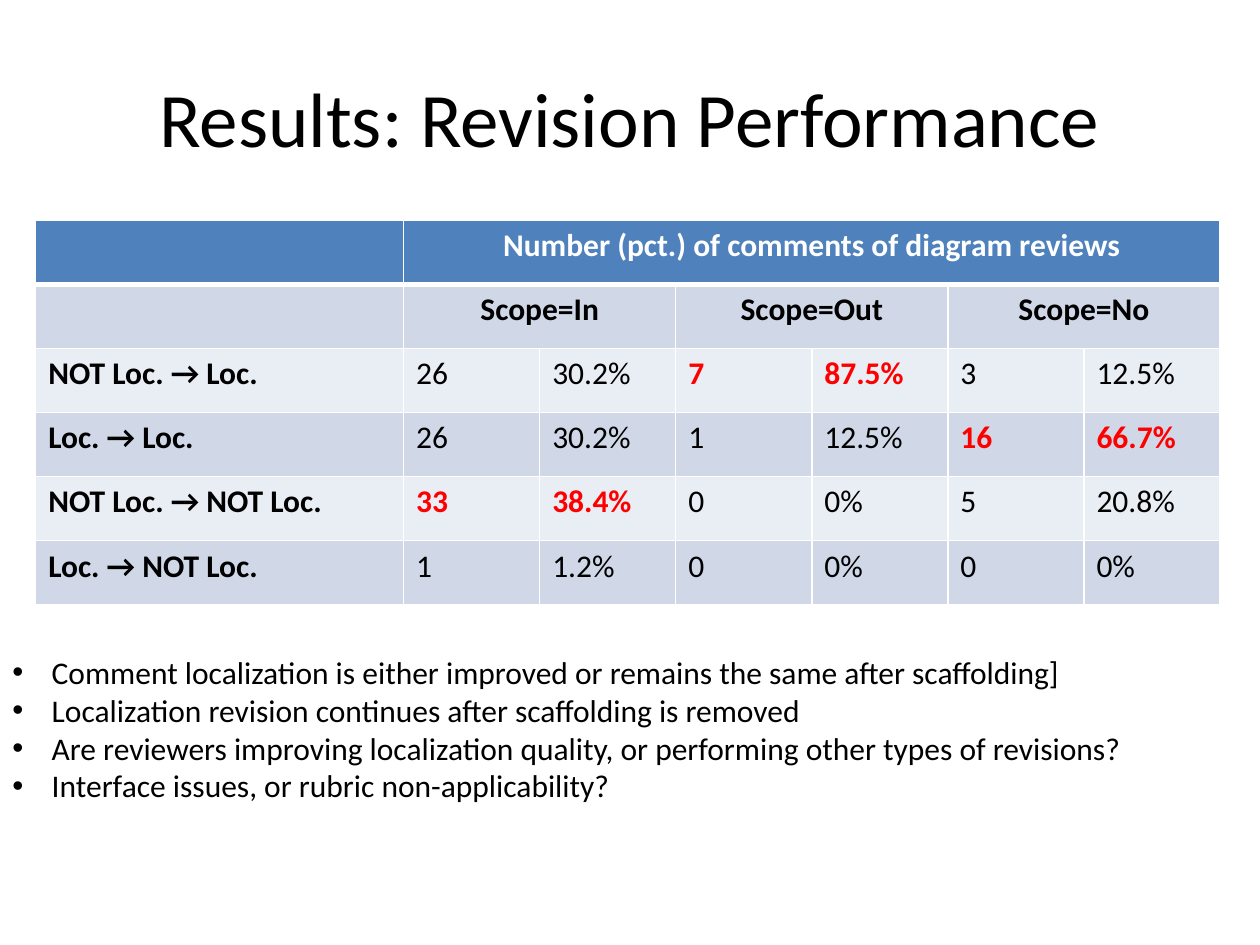
from dataclasses import dataclass

from lxml.etree import SubElement
from pptx import Presentation
from pptx.dml.color import RGBColor
from pptx.enum.text import MSO_ANCHOR, PP_ALIGN
from pptx.oxml.ns import qn
from pptx.util import Pt

BLACK, WHITE, RED = "000000", "FFFFFF", "FF0000"
HEADER_FILL, DARK_BAND, LIGHT_BAND = "4F81BD", "D0D8E8", "E9EDF4"
LABEL_WIDTH, VALUE_WIDTH, ROW_HEIGHT = 210.24, 77.76, 36.6
BULLET_INDENT = 22.5


@dataclass
class Result:
    label: str
    values: tuple[str, ...]
    highlighted: tuple[int, ...] = ()


SCOPES = ("Scope=In", "Scope=Out", "Scope=No")
RESULTS = (
    Result("NOT Loc. → Loc.", ("26", "30.2%", "7", "87.5%", "3", "12.5%"), (2, 3)),
    Result("Loc. → Loc.", ("26", "30.2%", "1", "12.5%", "16", "66.7%"), (4, 5)),
    Result("NOT Loc. → NOT Loc.", ("33", "38.4%", "0", "0%", "5", "20.8%"), (0, 1)),
    Result("Loc. → NOT Loc.", ("1", "1.2%", "0", "0%", "0", "0%")),
)
FINDINGS = (
    "Comment localization is either improved or remains the same after scaffolding]",
    "Localization revision continues after scaffolding is removed",
    "Are reviewers improving localization quality, or performing other types of revisions?",
    "Interface issues, or rubric non-applicability?",
)


def color(value: str) -> RGBColor:
    return RGBColor.from_string(value)


def write(paragraph, text: str, *, size=18, bold=False, fill=BLACK, align=PP_ALIGN.LEFT) -> None:
    paragraph.alignment = align
    run = paragraph.add_run()
    run.text = text
    run.font.name = "Calibri"
    run.font.size = Pt(size)
    run.font.bold = bold
    run.font.color.rgb = color(fill)


def add_text_frame(slide, left: float, top: float, width: float, height: float):
    shape = slide.shapes.add_textbox(Pt(left), Pt(top), Pt(width), Pt(height))
    shape.text_frame.word_wrap = True
    return shape.text_frame


def add_bullet(paragraph) -> None:
    properties = paragraph._p.get_or_add_pPr()
    properties.set("marL", str(Pt(BULLET_INDENT)))
    properties.set("indent", str(-Pt(BULLET_INDENT)))
    SubElement(properties, qn("a:buFont"), typeface="Arial")
    SubElement(properties, qn("a:buChar"), char="•")


def style_cell(cell, fill: str, top: float, bottom: float) -> None:
    properties = cell._tc.get_or_add_tcPr()
    for side, width in (("L", 1), ("R", 1), ("T", top), ("B", bottom)):
        line = SubElement(properties, qn(f"a:ln{side}"), w=str(Pt(width)))
        SubElement(SubElement(line, qn("a:solidFill")), qn("a:srgbClr"), val=WHITE)
    cell.fill.solid()
    cell.fill.fore_color.rgb = color(fill)


def write_cell(cell, text: str, **text_format) -> None:
    write(cell.text_frame.paragraphs[0], text, **text_format)


def add_results_table(slide) -> None:
    row_count, column_count = len(RESULTS) + 2, 2 * len(SCOPES) + 1
    table = slide.shapes.add_table(
        row_count, column_count, Pt(20.4), Pt(126),
        Pt(LABEL_WIDTH + (column_count - 1) * VALUE_WIDTH), Pt(row_count * ROW_HEIGHT),
    ).table
    for index, column in enumerate(table.columns):
        column.width = Pt(VALUE_WIDTH if index else LABEL_WIDTH)
    for index, row in enumerate(table.rows):
        row.height = Pt(ROW_HEIGHT)
        fill = HEADER_FILL if index == 0 else DARK_BAND if index % 2 else LIGHT_BAND
        for cell in row.cells:
            style_cell(cell, fill, 3 if index == 1 else 1, 3 if index == 0 else 1)

    heading = table.cell(0, 1)
    heading.merge(table.cell(0, column_count - 1))
    write_cell(heading, "Number (pct.) of comments of diagram reviews",
               bold=True, fill=WHITE, align=PP_ALIGN.CENTER)
    for index, scope in enumerate(SCOPES):
        cell = table.cell(1, 2 * index + 1)
        cell.merge(table.cell(1, 2 * index + 2))
        write_cell(cell, scope, bold=True, align=PP_ALIGN.CENTER)
    for row, result in enumerate(RESULTS, start=2):
        write_cell(table.cell(row, 0), result.label, bold=True)
        for index, value in enumerate(result.values):
            strong = index in result.highlighted
            write_cell(table.cell(row, index + 1), value, bold=strong, fill=RED if strong else BLACK)


def main() -> None:
    presentation = Presentation()
    presentation.slide_width, presentation.slide_height = Pt(720), Pt(540)
    slide = presentation.slides.add_slide(presentation.slide_layouts[6])

    title = add_text_frame(slide, 36, 21.6, 648, 90)
    title.vertical_anchor = MSO_ANCHOR.MIDDLE
    write(title.paragraphs[0], "Results: Revision Performance", size=44, align=PP_ALIGN.CENTER)

    add_results_table(slide)

    findings = add_text_frame(slide, 0, 369.6, 720, 94.8)
    for index, finding in enumerate(FINDINGS):
        paragraph = findings.add_paragraph() if index else findings.paragraphs[0]
        add_bullet(paragraph)
        write(paragraph, finding)

    presentation.save("out.pptx")


if __name__ == "__main__":
    main()
